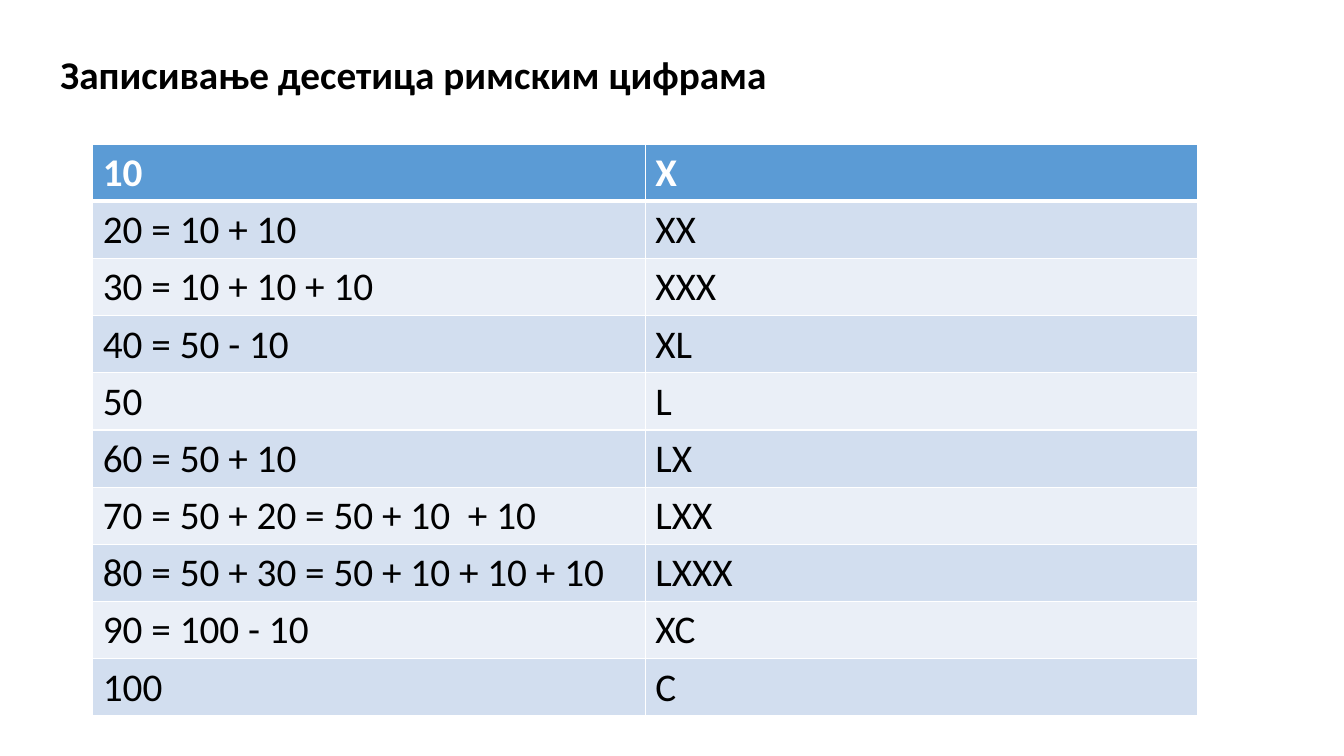
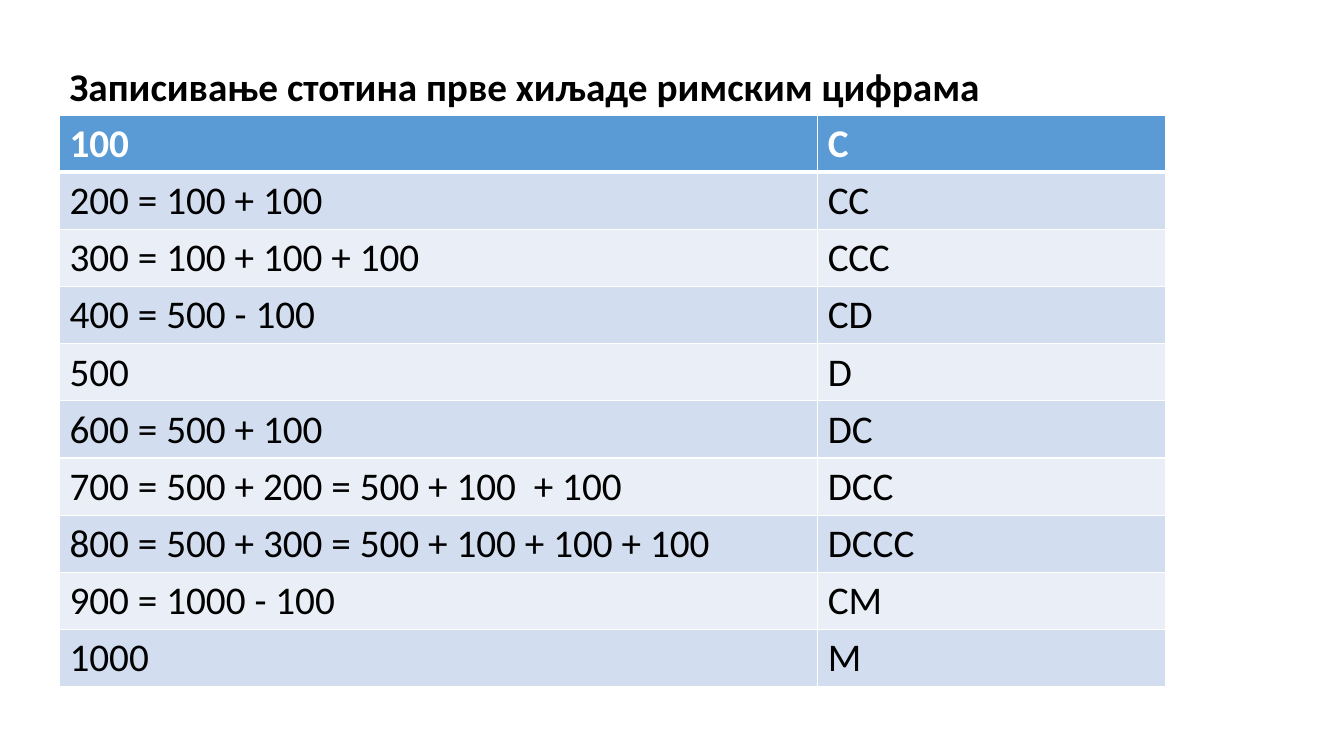
import pptx
import pptx.util
import pptx.dml.color
import pptx.enum.text
import pptx.oxml.ns
import lxml.etree

Inches = pptx.util.Inches
COLORS = {
    "text": "000000",
    "white": "FFFFFF",
    "head": "5B9BD5",
    "dark": "D2DEEF",
    "light": "EAEFF7",
}


class Deck:
    """Shared style and the current slide."""

    font = "Calibri"
    size = 28

    def __init__(self):
        self.show = pptx.Presentation()
        self.show.slide_width = Inches(13.33)
        self.show.slide_height = Inches(7.5)
        self.slide = None

    def color(self, name):
        return pptx.dml.color.RGBColor.from_string(COLORS[name])

    def add_text(self, frame, text, color, bold):
        run = frame.paragraphs[0].add_run()
        run.text = text
        run.font.name = self.font
        run.font.size = pptx.util.Pt(self.size)
        run.font.bold = bold
        run.font.color.rgb = self.color(color)

    def title(self, text, left, top, width):
        """Start a slide and fill its title."""
        self.slide = self.show.slides.add_slide(self.show.slide_layouts[5])
        box = self.slide.shapes.title
        box.left, box.top = Inches(left), Inches(top)
        box.width, box.height = Inches(width), Inches(0.57)
        frame = box.text_frame
        frame.word_wrap = True
        frame.auto_size = pptx.enum.text.MSO_AUTO_SIZE.SHAPE_TO_FIT_TEXT
        frame.vertical_anchor = pptx.enum.text.MSO_ANCHOR.TOP
        frame.paragraphs[0].alignment = pptx.enum.text.PP_ALIGN.LEFT
        self.add_text(frame, text, "text", True)

    def border(self, cell, side, width):
        qn = pptx.oxml.ns.qn
        props = cell._tc.get_or_add_tcPr()
        line = lxml.etree.SubElement(props, qn("a:ln" + side),
                                     w=str(pptx.util.Pt(width)))
        fill = lxml.etree.SubElement(line, qn("a:solidFill"))
        lxml.etree.SubElement(fill, qn("a:srgbClr"), val=COLORS["white"])

    def table(self, rows, left, top, widths):
        """Banded table with a heading row and white rules."""
        grid = self.slide.shapes.add_table(
            len(rows), len(widths), Inches(left), Inches(top),
            Inches(sum(widths)), Inches(5.67)).table
        for col, width in zip(grid.columns, widths):
            col.width = Inches(width)
        for r, row in enumerate(rows):
            head = r == 0
            band = "head" if head else "dark" if r % 2 else "light"
            # The rule under the heading is thicker
            rules = {"L": 1, "R": 1, "T": 3 if r == 1 else 1,
                     "B": 3 if head else 1}
            for c, text in enumerate(row):
                cell = grid.cell(r, c)
                for side, width in rules.items():
                    self.border(cell, side, width)
                cell.fill.solid()
                cell.fill.fore_color.rgb = self.color(band)
                self.add_text(cell.text_frame, text,
                              "white" if head else "text", head)


TENS = [
    ("10", "X"),
    ("20 = 10 + 10", "ХХ"),
    ("30 = 10 + 10 + 10", "ХХХ"),
    ("40 = 50 - 10", "XL"),
    ("50", "L"),
    ("60 = 50 + 10", "LX"),
    ("70 = 50 + 20 = 50 + 10  + 10", "LXX"),
    ("80 = 50 + 30 = 50 + 10 + 10 + 10", "LXXX"),
    ("90 = 100 - 10", "XC"),
    ("100", "C"),
]
HUNDREDS = [
    ("100", "С"),
    ("200 = 100 + 100", "СС"),
    ("300 = 100 + 100 + 100", "ССС"),
    ("400 = 500 - 100", "CD"),
    ("500", "D"),
    ("600 = 500 + 100", "DC"),
    ("700 = 500 + 200 = 500 + 100  + 100", "DCC"),
    ("800 = 500 + 300 = 500 + 100 + 100 + 100", "DCCC"),
    ("900 = 1000 - 100", "CM"),
    ("1000", "M"),
]


def main():
    deck = Deck()

    # Tens
    deck.title("Записивање десетица римским цифрама", 0.5, 0.45, 10.64)
    deck.table(TENS, 0.92, 1.43, (5.48, 5.48))

    # Hundreds
    deck.title("Записивање стотина прве хиљаде римским цифрама",
               0.59, 0.57, 11.86)
    deck.table(HUNDREDS, 0.59, 1.14, (7.52, 3.45))

    deck.show.save("out.pptx")


if __name__ == "__main__":
    main()
